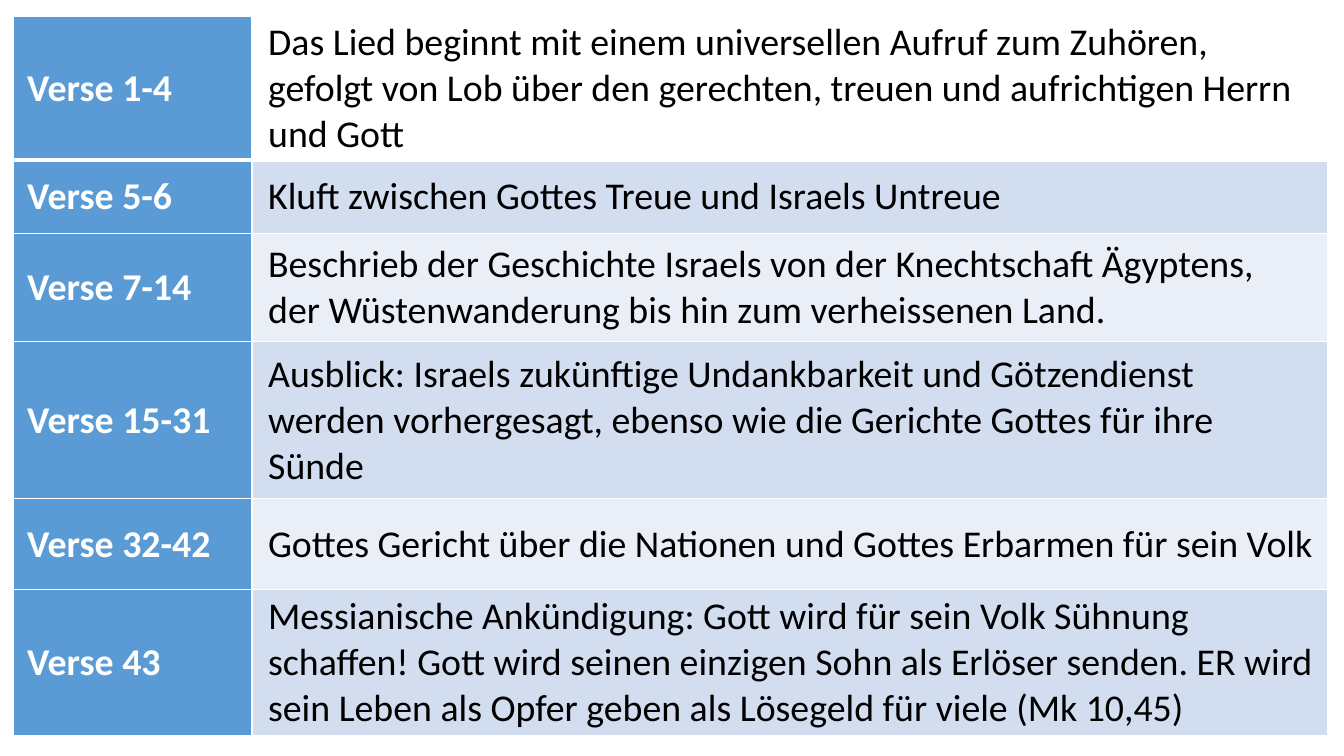
"""Build a slide with a table that outlines the verses of a song."""
import pptx
import pptx.dml.color
import pptx.enum.text
import pptx.oxml
import pptx.oxml.ns
import pptx.util

Inches = pptx.util.Inches
Pt = pptx.util.Pt

COLORS = {
    "label": "5B9BD5",
    "plain": "FFFFFF",
    "dark band": "D2DEEF",
    "light band": "EAEFF7",
    "text": "000000",
    "border": "FFFFFF",
}
SECTIONS = [
    ("Verse 1-4", "Das Lied beginnt mit einem universellen Aufruf zum Zuhören, "
     "gefolgt von Lob über den gerechten, treuen und aufrichtigen Herrn und Gott", 1.43),
    ("Verse 5-6", "Kluft zwischen Gottes Treue und Israels Untreue", 0.73),
    ("Verse 7-14", "Beschrieb der Geschichte Israels von der Knechtschaft Ägyptens, "
     "der Wüstenwanderung bis hin zum verheissenen Land.", 1.07),
    ("Verse 15-31", "Ausblick: Israels zukünftige Undankbarkeit und Götzendienst "
     "werden vorhergesagt, ebenso wie die Gerichte Gottes für ihre Sünde", 1.56),
    ("Verse 32-42", "Gottes Gericht über die Nationen und Gottes Erbarmen für sein Volk", 0.9),
    ("Verse 43", "Messianische Ankündigung: Gott wird für sein Volk Sühnung schaffen! "
     "Gott wird seinen einzigen Sohn als Erlöser senden. ER wird sein Leben als Opfer "
     "geben als Lösegeld für viele (Mk 10,45)", 1.45),
]
COLUMN_WIDTHS = (2.37, 10.67)
LEFT, TOP = 0.13, 0.16


def add_borders(cell, top, bottom):
    properties = cell._tc.get_or_add_tcPr()
    for side, width in (("L", 1), ("R", 1), ("T", top), ("B", bottom)):
        properties.append(pptx.oxml.parse_xml(
            f'<a:ln{side} {pptx.oxml.ns.nsdecls("a")} w="{Pt(width)}">'
            f'<a:solidFill><a:srgbClr val="{COLORS["border"]}"/></a:solidFill>'
            f'</a:ln{side}>'))


def write_cell(cell, text, fill, color, bold=False, inset=0.14, size=27, font="Calibri"):
    cell.fill.solid()
    cell.fill.fore_color.rgb = pptx.dml.color.RGBColor.from_string(COLORS[fill])
    cell.vertical_anchor = pptx.enum.text.MSO_ANCHOR.MIDDLE
    cell.margin_left, cell.margin_right = Inches(inset), Inches(0.14)
    cell.margin_top = cell.margin_bottom = 0
    span = cell.text_frame.paragraphs[0].add_run()
    span.text = text
    span.font.name = font
    span.font.size = Pt(size)
    span.font.bold = bold
    span.font.color.rgb = pptx.dml.color.RGBColor.from_string(COLORS[color])


def main():
    deck = pptx.Presentation()
    deck.slide_width, deck.slide_height = Inches(13.33), Inches(7.5)
    page = deck.slides.add_slide(deck.slide_layouts[6])
    height = sum(section[2] for section in SECTIONS)
    table = page.shapes.add_table(
        len(SECTIONS), len(COLUMN_WIDTHS), Inches(LEFT), Inches(TOP),
        Inches(sum(COLUMN_WIDTHS)), Inches(height)).table
    for column, width in zip(table.columns, COLUMN_WIDTHS):
        column.width = Inches(width)
    for index, (verses, summary, row_height) in enumerate(SECTIONS):
        table.rows[index].height = Inches(row_height)
        label, description = table.cell(index, 0), table.cell(index, 1)
        for cell in (label, description):
            add_borders(cell, top=3 if index == 1 else 1, bottom=3 if index == 0 else 1)
        band = "plain" if index == 0 else ("light band", "dark band")[index % 2]
        write_cell(label, verses, "label", "plain", bold=True)
        write_cell(description, summary, band, "text", inset=0.16)
    deck.save("out.pptx")


if __name__ == "__main__":
    main()
